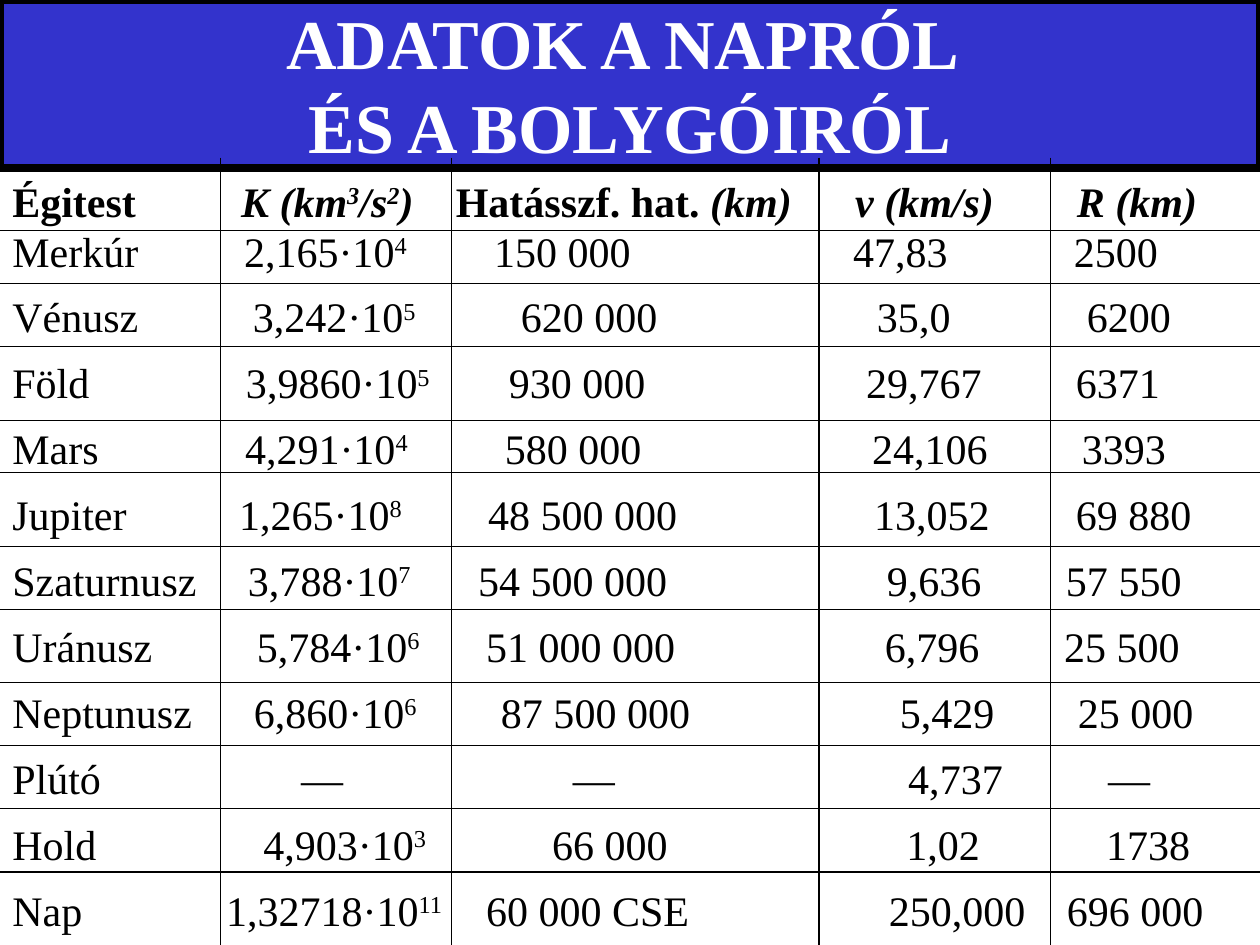
from collections import namedtuple

from lxml import etree
from pptx import Presentation
from pptx import util as u
from pptx.dml.color import RGBColor
from pptx.enum import shapes, text
from pptx.oxml.ns import qn

BLUE = RGBColor(0x33, 0x33, 0xCC)
BLACK = RGBColor(0, 0, 0)
WHITE = RGBColor(0xFF, 0xFF, 0xFF)
FONT = "Times New Roman"

Box = namedtuple("Box", "left top width height")
PAGE = Box(0, 0, 25.4, 19.05)
TITLE = Box(0, 0, 25.4, 3.38)
GRID = Box(0, 3.18, 25.4, 15.87)
DATA = Box(0, 3.61, 25.4, 15.44)

ROW_LINES = (1.47, 2.54, 3.81, 5.29, 6.35, 7.83, 9.1, 10.58, 11.85, 13.12, 14.4)
COLUMN_LINES = (4.45, 9.1, 16.51, 21.17)

HEADER = ("Égitest", "_K (km^3^/s^2^)", "Hatásszf. hat. _(km)", "_v (km/s)", "_R (km)")
HEADER_STOPS = (4.61, 8.94, 16.99, 21.46)
BODIES = (
    (("Merkúr", "2,165·10^4", "150 000", "47,83", "2500"), (4.67, 9.71, 16.95, 21.4)),
    (("Vénusz", "3,242·10^5", "620 000", "35,0", "6200"), (4.85, 10.25, 17.43, 21.66)),
    (("Föld", "3,9860·10^5", "930 000", "29,767", "6371"), (4.71, 10.01, 17.21, 21.44)),
    (("Mars", "4,291·10^4", "580 000", "24,106", "3393"), (4.69, 9.93, 17.33, 21.56)),
    (("Jupiter", "1,265·10^8", "48 500 000", "13,052", "69 880"), (4.57, 9.59, 17.37, 21.44)),
    (("Szaturnusz", "3,788·10^7", "54 500 000", "9,636", "57 550"), (4.75, 9.39, 17.63, 21.24)),
    (("Uránusz", "5,784·10^6", "51 000 000", "6,796", "25 500"), (4.93, 9.55, 17.59, 21.2)),
    (("Neptunusz", "6,860·10^6", "87 500 000", "5,429", "25 000"), (4.87, 9.85, 17.89, 21.48)),
    (("Plútó", "—", "—", "4,737", "—"), (5.82, 11.3, 18.06, 22.09)),
    (("Hold", "4,903·10^3", "66 000", "1,02", "1738"), (5.06, 10.88, 18.02, 22.05)),
    (("Nap", "1,32718·10^11", "60 000 CSE", "250,000", "696 000"), (4.31, 9.55, 17.67, 21.26)),
)


def to_cm(box):
    """Return the four lengths of a box in centimetres."""
    return [u.Cm(length) for length in box]


def add_span(para, words, size=24, color=BLACK, bold=False, italic=False, raised=False):
    """Append one formatted run to a paragraph."""
    span = para.add_run()
    span.text = words
    font = span.font
    font.name, font.size, font.bold, font.italic = FONT, u.Pt(size), bold, italic
    font.color.rgb = color
    if raised:
        font._element.set("baseline", "30000")


def add_cell(para, words, bold=False):
    """Append a cell, where _ starts italics and ^ toggles superscript."""
    for slant, section in enumerate(words.split("_")):
        for level, part in enumerate(section.split("^")):
            if part:
                add_span(para, part, bold=bold, italic=slant == 1, raised=level % 2 == 1)


def set_tabs(para, stops):
    """Give a paragraph left tab stops."""
    tabs = etree.SubElement(para._p.get_or_add_pPr(), qn("a:tabLst"))
    for stop in stops:
        etree.SubElement(tabs, qn("a:tab"), pos=str(int(u.Cm(stop))), algn="l")


def add_row(para, cells, stops, spacing, before, bold=False):
    """Fill a paragraph with the cells of one row."""
    set_tabs(para, stops)
    para.line_spacing = spacing
    para.space_before = u.Pt(before)
    for index, words in enumerate(cells):
        if index:
            add_span(para, "\t", bold=bold)
        add_cell(para, words, bold)


def add_title(page, box):
    """Place the framed title band."""
    band = page.shapes.add_shape(shapes.MSO_SHAPE.RECTANGLE, *to_cm(box))
    band.shadow.inherit = False
    band.fill.solid()
    band.fill.fore_color.rgb = BLUE
    band.line.color.rgb = BLACK
    band.line.width = u.Pt(4.5)
    frame = band.text_frame
    frame.word_wrap = True
    frame.vertical_anchor = text.MSO_ANCHOR.MIDDLE
    para = frame.paragraphs[0]
    para.alignment = text.PP_ALIGN.CENTER
    add_span(para, "ADATOK A NAPRÓL ", size=40, color=WHITE, bold=True)
    para.add_line_break()
    add_span(para, "ÉS A BOLYGÓIRÓL", size=40, color=WHITE, bold=True)


def add_data(page, box):
    """Place the header and one line of values for each body."""
    frame = page.shapes.add_textbox(*to_cm(box)).text_frame
    frame.word_wrap = True
    add_row(frame.paragraphs[0], HEADER, HEADER_STOPS, 0.8, 0, bold=True)
    for index, (cells, stops) in enumerate(BODIES):
        spacing, before = (1.1, 6) if index else (0.8, 5.3)
        add_row(frame.add_paragraph(), cells, stops, spacing, before)


def add_line(page, *ends):
    """Draw a thin black line between two points."""
    line = page.shapes.add_connector(shapes.MSO_CONNECTOR.STRAIGHT, *to_cm(ends))
    line.line.color.rgb = BLACK
    line.line.width = u.Pt(0.75)
    etree.SubElement(line._element.spPr, qn("a:effectLst"))


def add_grid(page, box):
    """Rule the rows and columns of a box."""
    right, bottom = box.left + box.width, box.top + box.height
    for offset in ROW_LINES:
        add_line(page, box.left, box.top + offset, right, box.top + offset)
    for offset in COLUMN_LINES:
        add_line(page, box.left + offset, box.top, box.left + offset, bottom)


def main():
    """Build and save the deck."""
    deck = Presentation()
    deck.slide_width, deck.slide_height = u.Cm(PAGE.width), u.Cm(PAGE.height)
    page = deck.slides.add_slide(deck.slide_layouts[6])
    add_title(page, TITLE)
    add_data(page, DATA)
    add_grid(page, GRID)
    deck.save("out.pptx")


if __name__ == "__main__":
    main()
